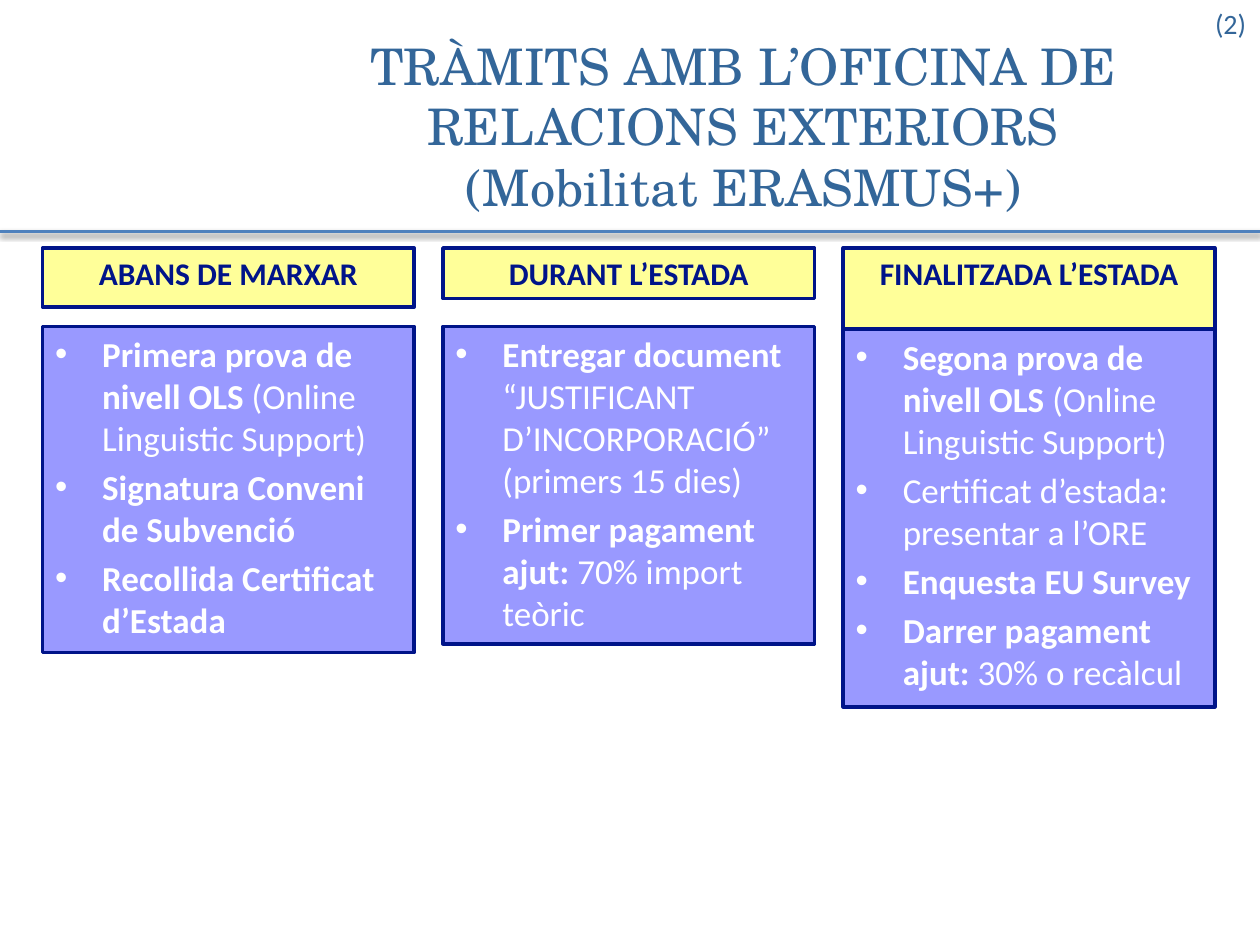
from dataclasses import dataclass

from lxml import etree
from pptx import Presentation
from pptx.dml.color import RGBColor
from pptx.enum.shapes import MSO_CONNECTOR, MSO_SHAPE
from pptx.enum.text import MSO_ANCHOR, PP_ALIGN
from pptx.oxml.ns import qn
from pptx.util import Cm, Pt

RECT = MSO_SHAPE.RECTANGLE
LINE = MSO_CONNECTOR.STRAIGHT
TOP, MIDDLE = MSO_ANCHOR.TOP, MSO_ANCHOR.MIDDLE
LEFT, CENTER, RIGHT = PP_ALIGN.LEFT, PP_ALIGN.CENTER, PP_ALIGN.RIGHT

COLORS = {
    "title": "336699",
    "rule": "4F81BD",
    "navy": "001489",
    "yellow": "FFFF99",
    "violet": "9999FF",
    "white": "FFFFFF",
    "black": "000000",
}
COL_LEFT, COL_STEP, COL_WIDTH = 0.86, 8.07, 7.49
HEAD_TOP = 5.0
INDENT = Cm(0.95)


@dataclass
class Item:
    bold: str = ""
    plain: str = ""


@dataclass
class Stage:
    name: str
    head: float
    top: float
    body: float
    items: list[Item]


STAGES = [
    Stage("ABANS DE MARXAR", 1.19, 6.58, 6.58, [
        Item("Primera prova de nivell OLS ", "(Online Linguistic Support)"),
        Item("Signatura Conveni de Subvenció"),
        Item("Recollida Certificat d’Estada"),
    ]),
    Stage("DURANT L’ESTADA", 1.02, 6.58, 6.4, [
        Item("Entregar document ", "“JUSTIFICANT D’INCORPORACIÓ” (primers 15 dies)"),
        Item("Primer pagament ajut: ", "70% import teòric"),
    ]),
    Stage("FINALITZADA L’ESTADA", 1.8, 6.63, 7.62, [
        Item("Segona prova de nivell OLS ", "(Online Linguistic Support)"),
        Item(plain="Certificat d’estada: presentar a l’ORE"),
        Item("Enquesta EU Survey"),
        Item("Darrer pagament ajut: ", "30% o recàlcul"),
    ]),
]


def tint(name: str) -> RGBColor:
    return RGBColor.from_string(COLORS[name])


def write(shape, items: list[Item], *, size: float, color: str,
          font: str = "Calibri", align=LEFT, anchor=TOP,
          bullet: bool = False, inset: bool = True) -> None:
    frame = shape.text_frame
    frame.word_wrap = True
    frame.vertical_anchor = anchor
    if not inset:
        frame.margin_left = frame.margin_right = 0
        frame.margin_top = frame.margin_bottom = 0
    for i, item in enumerate(items):
        para = frame.add_paragraph() if i else frame.paragraphs[0]
        para.alignment = align
        if bullet:
            props = para._p.get_or_add_pPr()
            props.set("marL", str(INDENT))
            props.set("indent", str(-INDENT))
            etree.SubElement(props, qn("a:buFont"), typeface="Arial")
            etree.SubElement(props, qn("a:buChar"), char="•")
        if i:
            para.space_before = Pt(size * 0.2)
        for text, bold in ((item.bold, True), (item.plain, False)):
            if not text:
                continue
            for row, part in enumerate(text.split("\n")):
                if row:
                    para.add_line_break()
                run = para.add_run()
                run.text = part
                run.font.name = font
                run.font.size = Pt(size)
                run.font.bold = bold
                run.font.color.rgb = tint(color)


def panel(slide, left: float, top: float, height: float, fill: str):
    shape = slide.shapes.add_shape(
        RECT, Cm(left), Cm(top), Cm(COL_WIDTH), Cm(height))
    shape.shadow.inherit = False
    shape.fill.solid()
    shape.fill.fore_color.rgb = tint(fill)
    shape.line.color.rgb = tint("navy")
    shape.line.width = Pt(2)
    return shape


def rule(slide, top: float, width: int) -> None:
    line = slide.shapes.add_connector(LINE, 0, Cm(top), width, Cm(top))
    line.line.color.rgb = tint("rule")
    line.line.width = Pt(2)
    effects = etree.SubElement(line._element.spPr, qn("a:effectLst"))
    shadow = etree.SubElement(
        effects, qn("a:outerShdw"), blurRad=str(Pt(3.1)), dist=str(Pt(1.6)),
        dir="5400000", rotWithShape="0")
    shade = etree.SubElement(shadow, qn("a:srgbClr"), val=COLORS["black"])
    etree.SubElement(shade, qn("a:alpha"), val="38000")


def column(slide, left: float, stage: Stage) -> None:
    head = panel(slide, left, HEAD_TOP, stage.head, "yellow")
    write(head, [Item(stage.name)], size=18, color="navy", align=CENTER)
    body = panel(slide, left, stage.top, stage.body, "violet")
    write(body, stage.items, size=20, color="white", bullet=True)


def main() -> None:
    deck = Presentation()
    deck.slide_width, deck.slide_height = Cm(25.4), Cm(19.05)
    slide = deck.slides.add_slide(deck.slide_layouts[6])

    number = slide.shapes.add_textbox(Cm(23.88), Cm(0.1), Cm(1.24), Cm(0.76))
    write(number, [Item(plain="(2)")], size=16, color="title",
          align=RIGHT, anchor=MIDDLE, inset=False)
    rule(slide, 4.67, deck.slide_width)
    title = slide.shapes.add_textbox(Cm(5.23), Cm(0.48), Cm(19.51), Cm(4.11))
    label = "TRÀMITS AMB L’OFICINA DE RELACIONS EXTERIORS\n(Mobilitat ERASMUS+)"
    write(title, [Item(plain=label)], size=28.8, color="title",
          font="TeX Gyre Schola", align=CENTER, anchor=MIDDLE)

    for i, stage in enumerate(STAGES):
        column(slide, COL_LEFT + i * COL_STEP, stage)
    deck.save("out.pptx")


if __name__ == "__main__":
    main()
